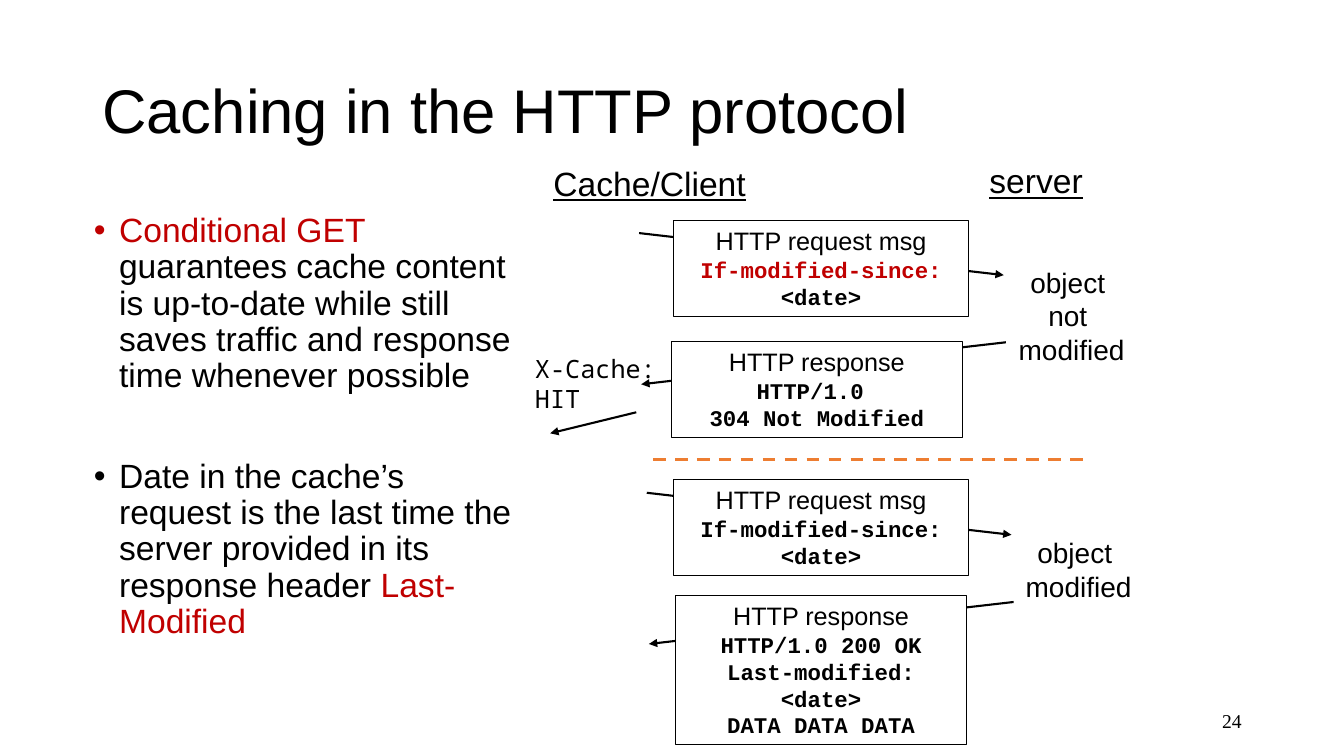
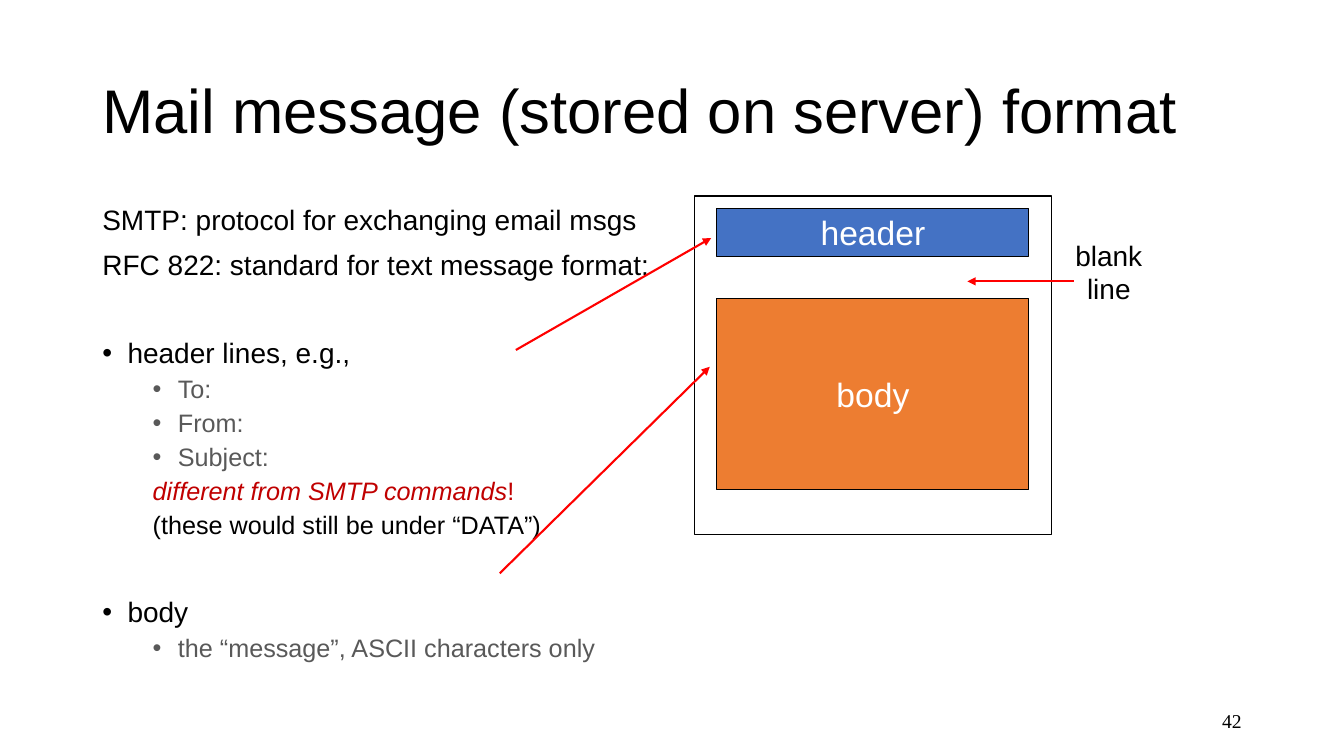
from lxml import etree
from pptx import Presentation
from pptx.dml.color import RGBColor
from pptx.enum.dml import MSO_LINE
from pptx.enum.shapes import MSO_CONNECTOR, MSO_SHAPE
from pptx.enum.text import MSO_ANCHOR, PP_ALIGN
from pptx.oxml.ns import qn
from pptx.util import Pt

LEFT, CENTER, RIGHT = PP_ALIGN.LEFT, PP_ALIGN.CENTER, PP_ALIGN.RIGHT
TOP, MIDDLE = MSO_ANCHOR.TOP, MSO_ANCHOR.MIDDLE
RECT, STRAIGHT, DASH = MSO_SHAPE.RECTANGLE, MSO_CONNECTOR.STRAIGHT, MSO_LINE.DASH

BLACK, WHITE, GREY = "000000", "FFFFFF", "595959"
DARK_RED, RED, BLUE, ORANGE = "C00000", "FF0000", "4472C4", "ED7D31"
SANS, CODE, MONO, SERIF = "Arial", "Courier New", "Noto Sans Mono", "Times New Roman"


def rgb(color):
    return RGBColor.from_string(color)


def run(text, size, color=BLACK, font=SANS, bold=False, italic=False, underline=False):
    return dict(text=text, size=size, color=color, font=font,
                bold=bold, italic=italic, underline=underline)


def code(text, color=BLACK):
    return run(text, 16, color, CODE, bold=True)


def para(*runs, align=LEFT, spacing=None, before=0, margin=None, bullet=False):
    return dict(runs=runs, align=align, spacing=spacing, before=before,
                margin=margin, bullet=bullet)


def item(*runs, before=10, bullet=True):
    return para(*runs, spacing=0.9, before=before, margin=18, bullet=bullet)


def subitem(*runs, bullet=True):
    return para(*runs, spacing=0.9, before=5, margin=54, bullet=bullet)


def centered(*runs):
    return para(*runs, align=CENTER)


class Deck:
    """Shared style, and the slide being built."""

    def __init__(self):
        self.prs = Presentation()
        self.prs.slide_width, self.prs.slide_height = Pt(960), Pt(540)
        self.s = None

    def slide(self, title, number):
        self.s = self.prs.slides.add_slide(self.prs.slide_layouts[6])
        self.text(66, 28.8, 828, 104.4, [para(run(title, 44), spacing=0.9)], anchor=MIDDLE)
        self.text(678, 500.5, 216, 28.8,
                  [para(run(str(number), 14, font=SERIF), align=RIGHT)], anchor=MIDDLE)

    def fill_text(self, tf, paras, anchor, wrap):
        tf.word_wrap = wrap
        tf.vertical_anchor = anchor
        for i, spec in enumerate(paras):
            p = tf.paragraphs[0] if i == 0 else tf.add_paragraph()
            p.alignment = spec["align"]
            p.space_before = Pt(spec["before"] if i else 0)
            if spec["spacing"]:
                p.line_spacing = spec["spacing"]
            if spec["margin"]:
                pPr = p._p.get_or_add_pPr()
                pPr.set("marL", str(Pt(spec["margin"])))
                pPr.set("indent", str(-Pt(18)))
                if spec["bullet"]:
                    etree.SubElement(pPr, qn("a:buFont")).set("typeface", SANS)
                    etree.SubElement(pPr, qn("a:buChar")).set("char", "•")
            for part in spec["runs"]:
                r = p.add_run()
                r.text = part["text"]
                r.font.name, r.font.size = part["font"], Pt(part["size"])
                r.font.color.rgb = rgb(part["color"])
                r.font.bold, r.font.italic = part["bold"], part["italic"]
                r.font.underline = part["underline"]

    def text(self, x, y, w, h, paras, anchor=TOP, wrap=True):
        sp = self.s.shapes.add_textbox(Pt(x), Pt(y), Pt(w), Pt(h))
        self.fill_text(sp.text_frame, paras, anchor, wrap)

    def label(self, x, y, w, h, lines, size=20, underline=False):
        paras = [centered(run(line, size, underline=underline)) for line in lines]
        self.text(x, y, w, h, paras, wrap=False)

    def box(self, x, y, w, h, paras=(), fill=None, weight=0.75, anchor=TOP):
        sp = self.s.shapes.add_shape(RECT, Pt(x), Pt(y), Pt(w), Pt(h))
        sp.shadow.inherit = False
        if fill:
            sp.fill.solid()
            sp.fill.fore_color.rgb = rgb(fill)
        else:
            sp.fill.background()
        sp.line.color.rgb = rgb(BLACK)
        sp.line.width = Pt(weight)
        self.fill_text(sp.text_frame, paras, anchor, True)

    def line(self, x1, y1, x2, y2, color=BLACK, weight=1.5, dash=None, arrow=True):
        sp = self.s.shapes.add_connector(STRAIGHT, Pt(x1), Pt(y1), Pt(x2), Pt(y2))
        sp.line.color.rgb = rgb(color)
        sp.line.width = Pt(weight)
        if dash:
            sp.line.dash_style = dash
        spPr = sp.element.spPr
        if arrow:
            etree.SubElement(spPr.find(qn("a:ln")), qn("a:tailEnd")).set("type", "triangle")
        etree.SubElement(spPr, qn("a:effectLst"))


def caching_slide(deck):
    deck.slide("Caching in the HTTP protocol", 24)
    deck.text(60, 149, 318, 339, [
        item(run("Conditional GET ", 24, DARK_RED),
             run("guarantees cache content is up-to-date while still saves traffic "
                 "and response time whenever possible", 24)),
        item(run("Date in the cache’s request is the last time the server provided "
                 "in its response header ", 24),
             run("Last-Modified", 24, DARK_RED), before=46),
    ])
    deck.label(387.5, 113, 153, 36, ["Cache/Client"], 24, underline=True)
    deck.label(699, 111, 82, 36, ["server"], 24, underline=True)

    # Two exchanges: arrows first, message boxes over them
    for dx, dy in ((0, 0), (5.5, 185.5)):
        deck.line(456.5 + dx, 166.5 + dy, 717 + dx, 196.5 + dy)
        deck.line(718.5 + dx, 244.5 + dy, 458 + dx, 274.5 + dy)

    for y, color in ((157.7, DARK_RED), (342.7, BLACK)):
        deck.box(481, y, 211, 68.4, [
            centered(run("HTTP request msg", 18)),
            centered(code("If-modified-since: ", color), code("<date>")),
        ], WHITE)

    for x, y, h, lines in (
        (479.5, 244, 68.4, ["HTTP/1.0 ", "304 Not Modified"]),
        (482.5, 425.5, 106.6, ["HTTP/1.0 200 OK", "Last-modified: <date>", "DATA DATA DATA"]),
    ):
        deck.box(x, y, 208, h, [centered(run("HTTP response", 18))]
                 + [centered(code(line)) for line in lines], WHITE)

    deck.label(720, 186, 91, 80, ["object ", "not ", "modified"])
    deck.label(725, 379, 91, 55.5, ["object ", "modified"])
    deck.line(466.5, 328.5, 774, 328.5, ORANGE, 2.25, DASH, arrow=False)

    # Cache hit
    deck.line(454.5, 294.5, 393, 309.5)
    deck.text(375, 248.5, 112.5, 51, [para(run("X-Cache: HIT", 18, font=MONO))])


def mail_slide(deck):
    deck.slide("Mail message (stored on server) format", 42)
    deck.text(66, 144, 408.5, 342.5, [
        item(run("SMTP: protocol for exchanging email msgs", 20), bullet=False),
        item(run("RFC 822: standard for text message format:", 20), bullet=False),
        item(run("header lines, e.g.,", 20), before=41.5),
        *[subitem(run(field, 18, GREY)) for field in ("To:", "From:", "Subject:")],
        subitem(run("different from SMTP commands", 18, DARK_RED, italic=True),
                run("!", 18, DARK_RED), bullet=False),
        subitem(run("(these would still be under “DATA”)", 18), bullet=False),
        item(run("body", 20), before=41.5),
        subitem(run("the “message”, ASCII characters only", 18, GREY)),
    ])

    # Message layout
    for name, y, h, fill in (("header", 149, 34, BLUE), ("body", 213, 137, ORANGE)):
        deck.box(512, y, 223, h, [centered(run(name, 24, WHITE))], fill, anchor=MIDDLE)
    deck.box(496, 140, 255, 242, weight=1)

    # Pointers
    deck.label(760.5, 166.5, 63, 55.5, ["blank", "line"])
    for ends in ((368.5, 250, 508, 170), (357, 409.5, 507, 262), (767, 201, 691, 201)):
        deck.line(*ends, color=RED)


def main():
    deck = Deck()
    caching_slide(deck)
    mail_slide(deck)
    deck.prs.save("out.pptx")


if __name__ == "__main__":
    main()
